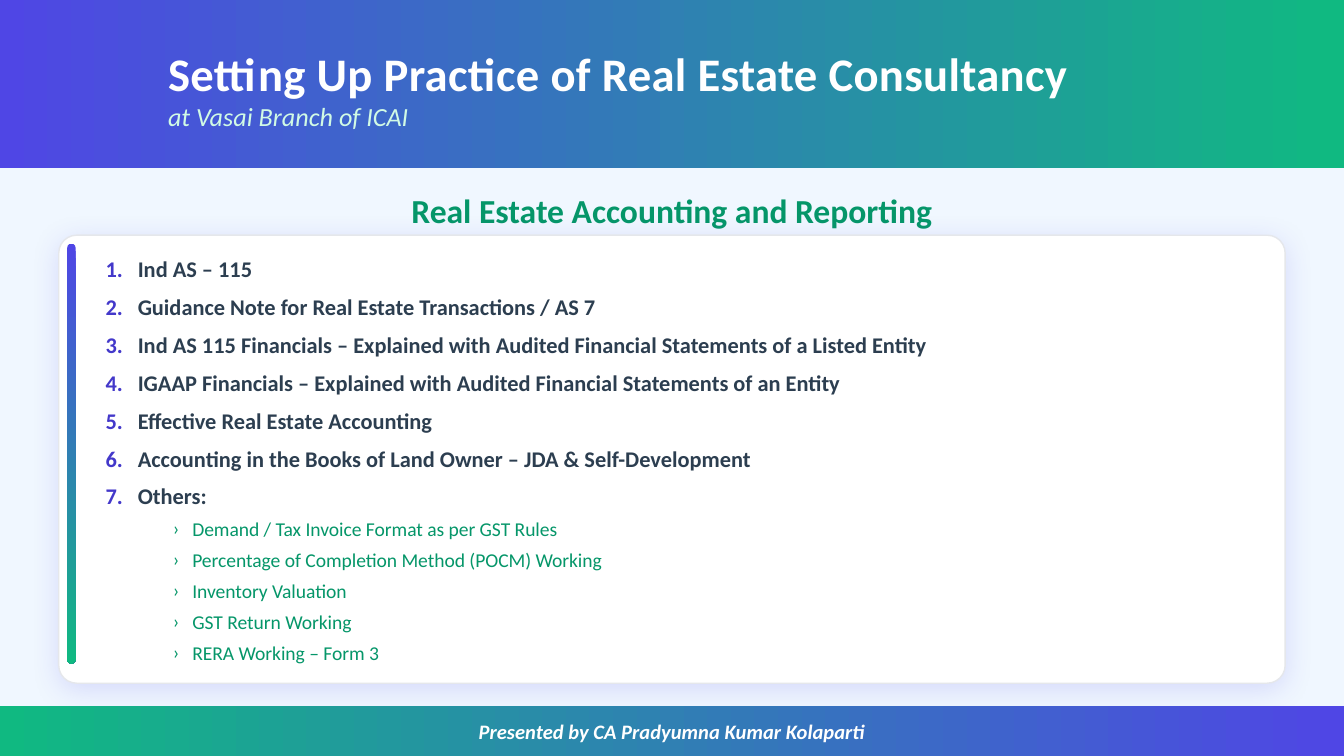
from lxml import etree
from pptx import Presentation
from pptx import util as u
from pptx.dml import color
from pptx.enum import shapes, text
from pptx.oxml import ns

PX = 9525
FONT = "Calibri"
COLORS = {
    "back": "F0F7FF", "indigo": "4F46E5", "emerald": "10B981", "white": "FFFFFF",
    "mint": "D1FAE5", "green": "059669", "border": "E5E7EB", "number": "4338CA",
    "ink": "2C3E50",
}
TOPICS = [
    "Ind AS – 115",
    "Guidance Note for Real Estate Transactions / AS 7",
    "Ind AS 115 Financials – Explained with Audited Financial Statements of a Listed Entity",
    "IGAAP Financials – Explained with Audited Financial Statements of an Entity",
    "Effective Real Estate Accounting",
    "Accounting in the Books of Land Owner – JDA & Self-Development",
    "Others:",
]
OTHERS = [
    "Demand / Tax Invoice Format as per GST Rules",
    "Percentage of Completion Method (POCM) Working",
    "Inventory Valuation",
    "GST Return Working",
    "RERA Working – Form 3",
]


def rgb(name):
    return color.RGBColor.from_string(COLORS[name])


def add(parent, tag, **attrs):
    return etree.SubElement(parent, ns.qn(tag), {k: str(v) for k, v in attrs.items()})


class Deck:
    def __init__(self, width, height):
        self.prs = Presentation()
        self.prs.slide_width = width * PX
        self.prs.slide_height = height * PX
        self.s = self.prs.slides.add_slide(self.prs.slide_layouts[6])
        fill = self.s.background.fill
        fill.solid()
        fill.fore_color.rgb = rgb("back")

    def shape(self, box, radius=None):
        kind = shapes.MSO_SHAPE.RECTANGLE if radius is None else shapes.MSO_SHAPE.ROUNDED_RECTANGLE
        sp = self.s.shapes.add_shape(kind, *[v * PX for v in box])
        if radius is not None:
            sp.adjustments[0] = radius
        sp.shadow.inherit = False
        sp.line.fill.background()
        return sp

    def gradient(self, box, start, end, angle=0, radius=None):
        sp = self.shape(box, radius)
        sp.fill.gradient()
        sp.fill.gradient_angle = angle
        for stop, name in zip(sp.fill.gradient_stops, (start, end)):
            stop.color.rgb = rgb(name)
        return sp

    def card(self, box, radius):
        sp = self.shape(box, radius)
        sp.fill.solid()
        sp.fill.fore_color.rgb = rgb("white")
        sp.line.color.rgb = rgb("border")
        sp.line.width = u.Pt(0.75)
        effects = sp._element.spPr.find(ns.qn("a:effectLst"))
        shadow = add(effects, "a:outerShdw", blurRad=u.Pt(15), dist=u.Pt(3),
                     dir=90 * 60000, algn="ctr", rotWithShape=0)
        tint = add(shadow, "a:srgbClr", val=COLORS["indigo"])
        add(tint, "a:alpha", val=16000)

    def style(self, p, size, name, bold=False, italic=False):
        for r in p.runs:
            r.font.name = FONT
            r.font.size = u.Pt(size)
            r.font.bold = bold
            r.font.italic = italic
            r.font.color.rgb = rgb(name)

    def caption(self, sp, words, size, name, anchor, align=text.PP_ALIGN.LEFT, inset=0, **look):
        tf = sp.text_frame
        tf.word_wrap = True
        tf.vertical_anchor = anchor
        tf.margin_left = tf.margin_right = inset * PX
        tf.margin_top = tf.margin_bottom = 0
        tf.text = words
        p = tf.paragraphs[0]
        p.alignment = align
        self.style(p, size, name, **look)
        return p

    def label(self, box, words, size, name, anchor, **look):
        sp = self.s.shapes.add_textbox(*[v * PX for v in box])
        return self.caption(sp, words, size, name, anchor, **look)

    def item(self, p, words, size, name, mark, left, hang, before, bold=False):
        p.text = words
        p.line_spacing = 1.2
        p.space_before = u.Pt(before)
        pPr = p._p.get_or_add_pPr()
        pPr.set("marL", str(left * PX))
        pPr.set("indent", str(-hang * PX))
        tint = add(pPr, "a:buClr")
        add(tint, "a:srgbClr", val=COLORS["green" if mark else "number"])
        add(pPr, "a:buFont", typeface=FONT)
        if mark:
            add(pPr, "a:buChar", char=mark)
        else:
            add(pPr, "a:buAutoNum", type="arabicPeriod")
        self.style(p, size, name, bold=bold)

    def outline(self, box, topics, details):
        tf = self.s.shapes.add_textbox(*[v * PX for v in box]).text_frame
        tf.word_wrap = True
        for i, words in enumerate(topics):
            p = tf.add_paragraph() if i else tf.paragraphs[0]
            self.item(p, words, 12, "ink", None, 23, 23, 3 if i else 0, bold=True)
        for words in details:
            self.item(tf.add_paragraph(), words, 10.5, "green", "›", 62, 14, 1.5)


def main():
    top, middle, bottom = text.MSO_ANCHOR.TOP, text.MSO_ANCHOR.MIDDLE, text.MSO_ANCHOR.BOTTOM
    center = text.PP_ALIGN.CENTER
    deck = Deck(960, 540)

    deck.gradient((0, 0, 960, 120), "indigo", "emerald")
    title = deck.label((120, 18, 792, 54), "Setting Up Practice of Real Estate Consultancy",
                       25, "white", bottom, bold=True)
    title.runs[0].font._element.set("spc", "20")
    deck.label((120, 72, 792, 36), "at Vasai Branch of ICAI", 14, "mint", top, italic=True)

    deck.label((48, 132, 864, 36), "Real Estate Accounting and Reporting",
               18, "green", middle, align=center, bold=True)
    deck.card((42, 168, 876, 320), 0.04)
    deck.gradient((48, 174, 6, 300), "indigo", "emerald", angle=270, radius=0.5)
    deck.outline((66, 174, 846, 300), TOPICS, OTHERS)

    footer = deck.gradient((0, 504, 960, 36), "emerald", "indigo")
    deck.caption(footer, "Presented by CA Pradyumna Kumar Kolaparti", 11, "white", middle,
                 align=center, inset=10, bold=True, italic=True)

    deck.prs.save("out.pptx")


if __name__ == "__main__":
    main()
